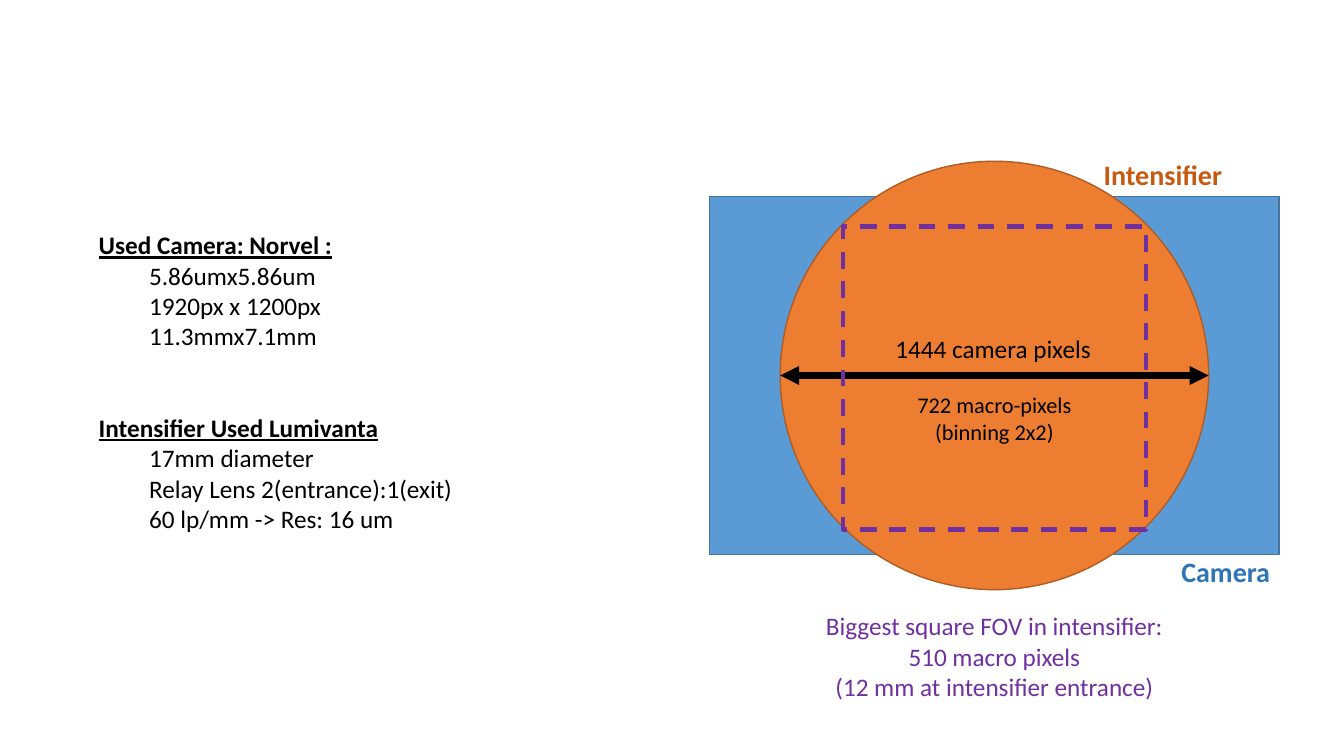
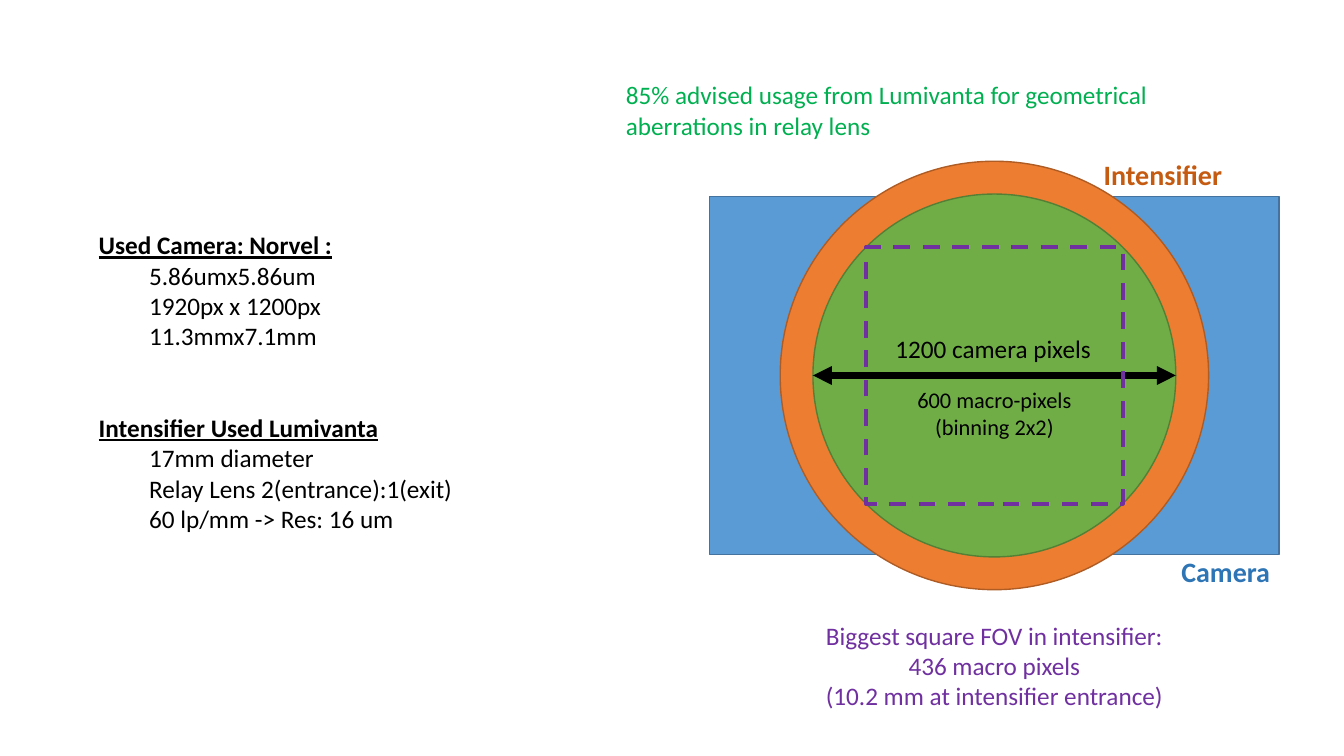
import math

from pptx import Presentation
from pptx import util as u
from pptx.dml.color import RGBColor
from pptx.enum import dml, shapes, text
from pptx.oxml.ns import qn
from lxml import etree

Pt = u.Pt
FONT = "Calibri"
COLORS = {
    "text": "000000",
    "camera": "5B9BD5", "camera_line": "43739E", "camera_label": "2E75B6",
    "intensifier": "ED7D31", "intensifier_line": "AF5C24",
    "intensifier_label": "C55A11",
    "usable": "70AD47", "usable_line": "538035", "note": "00B050",
    "fov": "7030A0",
}
DIAGRAM_BOX = (506.9, 140.4, 406.8, 255.6)
SPECS_BOX = (63.4, 160.6, 332.6, 269.3)
NOTE_BOX = (440, 53.3, 396.7, 51)
INTENSIFIER_D = 306
SPECS = [
    ("Used Camera: Norvel :",
     ["5.86umx5.86um", "1920px x 1200px", "11.3mmx7.1mm"]),
    ("Intensifier Used Lumivanta",
     ["17mm diameter", "Relay Lens 2(entrance):1(exit)",
      "60 lp/mm -> Res: 16 um"]),
]


def rgb(name):
    return RGBColor.from_string(COLORS[name])


def style(p, size, color, bold=False):
    p.font.name, p.font.size, p.font.bold = FONT, Pt(size), bold
    p.font.color.rgb = rgb(color)


def add_text(s, box, lines, size, color, bold=False, center=False, wrap=False):
    sp = s.shapes.add_textbox(*map(Pt, box))
    tf = sp.text_frame
    tf.word_wrap = wrap
    tf.auto_size = text.MSO_AUTO_SIZE.SHAPE_TO_FIT_TEXT
    for i, line in enumerate(lines):
        p = tf.add_paragraph() if i else tf.paragraphs[0]
        p.text = line
        style(p, size, color, bold)
        if center:
            p.alignment = text.PP_ALIGN.CENTER
    return tf


def add_centered(s, kind, cx, cy, w, h, line, fill=None, width=1):
    sp = s.shapes.add_shape(kind, Pt(cx - w / 2), Pt(cy - h / 2), Pt(w), Pt(h))
    sp.shadow.inherit = False
    if fill:
        sp.fill.solid()
        sp.fill.fore_color.rgb = rgb(fill)
    else:
        sp.fill.background()
    sp.line.color.rgb = rgb(line)
    sp.line.width = Pt(width)
    return sp


def add_double_arrow(s, x1, x2, y):
    c = s.shapes.add_connector(shapes.MSO_CONNECTOR.STRAIGHT,
                               Pt(x1), Pt(y), Pt(x2), Pt(y))
    c.line.color.rgb = rgb("text")
    c.line.width = Pt(4.5)
    props = c._element.spPr
    for end in ("a:headEnd", "a:tailEnd"):
        etree.SubElement(props.find(qn("a:ln")), qn(end), type="triangle")
    etree.SubElement(props, qn("a:effectLst"))


def add_specs(s, box):
    lines = [line for head, items in SPECS for line in (head, *items)]
    heads = [head for head, _ in SPECS]
    tf = add_text(s, box, lines, 18, "text", wrap=True)
    for p in tf.paragraphs:
        if p.text in heads:
            p.font.bold = p.font.underline = True
            p.space_before = Pt(44 if p.text != heads[0] else 0)
        else:
            p.level = 1
            p._p.get_or_add_pPr().set("marL", str(Pt(36)))


def add_diagram(s, box, used_d, pixels, macro, fov, macro_dy, fov_dy,
                square_dy=0):
    x, y, w, h = box
    cx, cy = x + w / 2, y + h / 2
    rect, oval = shapes.MSO_SHAPE.RECTANGLE, shapes.MSO_SHAPE.OVAL

    # Camera sensor and intensifier
    add_centered(s, rect, cx, cy, w, h, "camera_line", "camera")
    add_centered(s, oval, cx, cy, INTENSIFIER_D, INTENSIFIER_D,
                 "intensifier_line", "intensifier")
    add_text(s, (x + 274.3, y - 31.7, 100, 31.7), ["Intensifier"], 20,
             "intensifier_label", bold=True)
    add_text(s, (x + 329.8, y + h - 3.6, 78.5, 31.7), ["Camera"], 20,
             "camera_label", bold=True)

    # Usable circle and its diameter
    if used_d < INTENSIFIER_D:
        add_centered(s, oval, cx, cy, used_d, used_d, "usable_line", "usable")
    add_double_arrow(s, cx - used_d / 2, cx + used_d / 2, cy)
    add_text(s, (cx - 77.8, cy - 33.5, 155.6, 29),
             [f"{pixels} camera pixels"], 18, "text")
    add_text(s, (cx - 63, cy + macro_dy, 126, 46),
             [f"{macro} macro-pixels", "(binning 2x2)"], 16, "text",
             center=True)

    # Largest inscribed square
    side = used_d / math.sqrt(2)
    square = add_centered(s, rect, cx, cy + square_dy, side, side, "fov",
                          width=3)
    square.line.dash_style = dml.MSO_LINE.DASH
    fov_px, fov_mm = fov
    add_text(s, (cx - 133.6, y + h + fov_dy, 267.2, 72.7),
             ["Biggest square FOV in intensifier:", f"{fov_px} macro pixels",
              f"({fov_mm} mm at intensifier entrance)"], 18, "fov",
             center=True)


def add_slide(prs, note=None, **diagram):
    s = prs.slides.add_slide(prs.slide_layouts[6])
    add_specs(s, SPECS_BOX)
    add_diagram(s, DIAGRAM_BOX, **diagram)
    if note:
        add_text(s, NOTE_BOX, [note], 18, "note", wrap=True)


def main():
    prs = Presentation()
    prs.slide_width, prs.slide_height = Pt(960), Pt(540)
    # Full intensifier
    add_slide(prs, used_d=INTENSIFIER_D, pixels=1444, macro=722,
              fov=(510, "12"), macro_dy=7.6, fov_dy=36.7, square_dy=1.8)
    # Advised part of the intensifier
    add_slide(prs, used_d=259.2, pixels=1200, macro=600,
              fov=(436, "10.2"), macro_dy=4, fov_dy=43.2,
              note="85% advised usage from Lumivanta for "
                   "geometrical aberrations in relay lens")
    prs.save("out.pptx")


if __name__ == "__main__":
    main()
